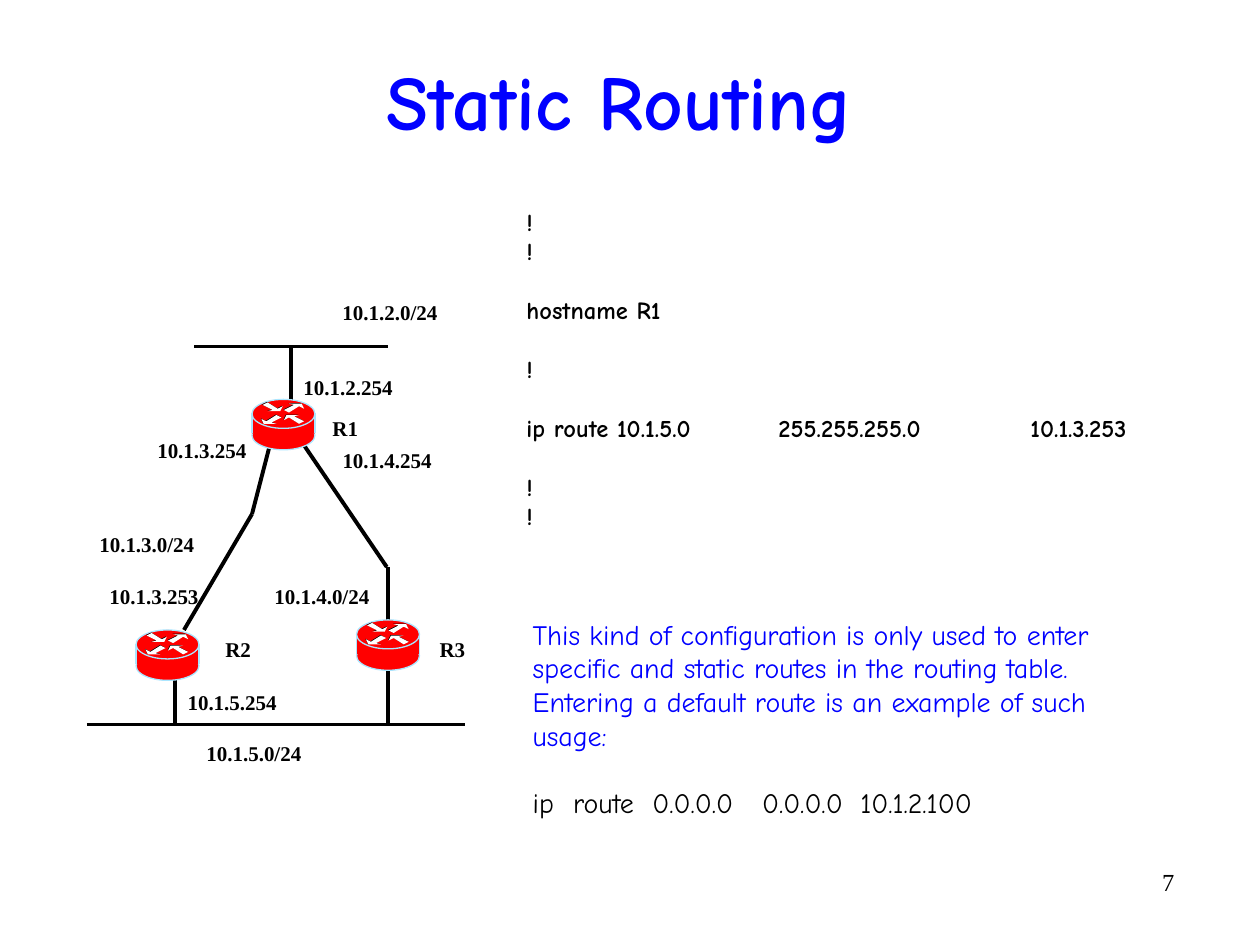
from lxml import etree
from pptx import Presentation
from pptx.dml.color import RGBColor
from pptx.enum.shapes import MSO_CONNECTOR, MSO_SHAPE
from pptx.enum.text import MSO_ANCHOR, MSO_AUTO_SIZE, PP_ALIGN
from pptx.oxml.ns import qn
from pptx.util import Inches, Pt

STRAIGHT = MSO_CONNECTOR.STRAIGHT
OVAL, RECTANGLE = MSO_SHAPE.OVAL, MSO_SHAPE.RECTANGLE
LEFT, CENTER, RIGHT = PP_ALIGN.LEFT, PP_ALIGN.CENTER, PP_ALIGN.RIGHT

BLACK = RGBColor(0x00, 0x00, 0x00)
WHITE = RGBColor(0xFF, 0xFF, 0xFF)
BLUE = RGBColor(0x00, 0x00, 0xFF)
RED = RGBColor(0xFF, 0x00, 0x00)
EDGE = RGBColor(0xAA, 0xE6, 0xFF)

COMIC = "Comic Neue"
TIMES = "Times New Roman"

# Text and whether a gap of one line comes before it
CONFIG = [
    ("!", False),
    ("!", False),
    ("hostname R1", True),
    ("!", True),
    ("ip route 10.1.5.0\t255.255.255.0\t10.1.3.253", True),
    ("!", True),
    ("!", False),
]
NOTE = ("This kind of configuration is only used to enter specific and static "
        "routes in the routing table. Entering a default route is an example "
        "of such usage:")
DEFAULT_ROUTE = "ip\troute\t0.0.0.0\t0.0.0.0\t10.1.2.100"

LINKS = [
    (1.54, 2.75, 3.08, 2.75),
    (2.31, 2.75, 2.31, 3.25),
    (2.15, 3.5, 2, 4.08),
    (2, 4.08, 1.46, 5),
    (2.39, 3.5, 3.07, 4.5),
    (3.08, 4.5, 3.08, 5),
    (1.39, 5.25, 1.39, 5.75),
    (3.08, 5.25, 3.08, 5.75),
    (0.69, 5.75, 3.69, 5.75),
]
NETWORKS = [("10.1.2.0/24", 2.62, 2.33), ("10.1.3.0/24", 0.69, 4.17),
            ("10.1.4.0/24", 2.08, 4.58), ("10.1.5.0/24", 1.54, 5.83)]
INTERFACES = [("10.1.2.254", 2.31, 2.92), ("10.1.3.254", 1.15, 3.42),
              ("10.1.4.254", 2.62, 3.5), ("10.1.3.253", 0.77, 4.58),
              ("10.1.5.254", 1.39, 5.42)]
ROUTER_NAMES = [("R1", 2.54, 3.25), ("R2", 1.69, 5), ("R3", 3.39, 5)]
# Widths leave a little room so that no label breaks
LABEL_GROUPS = [(NETWORKS, 1), (INTERFACES, 0.95), (ROUTER_NAMES, 0.48)]
ROUTERS = [(1.08, 5), (2.83, 4.92), (2, 3.17)]

# Upper right arrow, measured from the router's top left corner
ARROW = [(0.25, 0.08), (0.29, 0.1), (0.37, 0.05), (0.41, 0.07),
         (0.39, 0.03), (0.29, 0.03), (0.33, 0.04)]
# Mirror and shift in x, then in y, giving each of the four arrows
ARROW_PLACES = [(1, 0, 1, 0), (-1, 0.48, -1, 0.22),
                (1, -0.17, -1, 0.12), (-1, 0.66, 1, 0.09)]
ARROW_OFFSET = 0.3 / 72


def place(box, left, top, width, height):
    box.left, box.top = Inches(left), Inches(top)
    box.width, box.height = Inches(width), Inches(height)


def format_para(para, font, size, color, bold=False, align=LEFT, before=0):
    para.alignment = align
    para.space_before = Pt(before)
    for span in para.runs:
        span.font.name = font
        span.font.size = Pt(size)
        span.font.bold = bold
        span.font.color.rgb = color


def set_tabs(para, stops):
    tabs = etree.SubElement(para._p.get_or_add_pPr(), qn("a:tabLst"))
    for stop in stops:
        etree.SubElement(tabs, qn("a:tab"), pos=str(Inches(stop)), algn="l")


def add_text(page, text, left, top, width, height, wrap=True):
    box = page.shapes.add_textbox(Inches(left), Inches(top), Inches(width), Inches(height))
    box.text_frame.word_wrap = wrap
    box.text_frame.text = text
    return box.text_frame


def add_line(shapes, x1, y1, x2, y2, color, weight):
    line = shapes.add_connector(STRAIGHT, Inches(x1), Inches(y1), Inches(x2), Inches(y2))
    line.line.color.rgb = color
    line.line.width = Pt(weight)
    etree.SubElement(line._element.spPr, qn("a:effectLst"))


def paint(shape, fill, edge=None):
    shape.shadow.inherit = False
    shape.fill.solid()
    shape.fill.fore_color.rgb = fill
    if edge is None:
        shape.line.fill.background()
    else:
        shape.line.color.rgb = edge
        shape.line.width = Pt(0.75)


def add_arrow(shapes, left, top, arrow_place, color):
    flip_x, shift_x, flip_y, shift_y = arrow_place
    points = [(Inches(left + flip_x * x + shift_x), Inches(top + flip_y * y + shift_y))
              for x, y in ARROW]
    outline = shapes.build_freeform(*points[0])
    outline.add_line_segments(points[1:], close=True)
    paint(outline.convert_to_shape(), color)


def add_router(page, left, top):
    shapes = page.shapes.add_group_shape().shapes
    for kind, drop, height, edge in [(OVAL, 0.17, 0.23, EDGE),
                                     (RECTANGLE, 0.12, 0.15, None),
                                     (OVAL, 0, 0.23, EDGE)]:
        part = shapes.add_shape(kind, Inches(left), Inches(top + drop),
                                Inches(0.5), Inches(height))
        paint(part, RED, edge)
    for color, offset in [(BLACK, 0), (WHITE, ARROW_OFFSET)]:
        for arrow_place in ARROW_PLACES:
            add_arrow(shapes, left + offset, top + offset, arrow_place, color)
    for side in (left, left + 0.5):
        add_line(shapes, side, top + 0.11, side, top + 0.27, EDGE, 0.75)


def fill_title(title):
    place(title, 0.33, 0.42, 9.17, 0.75)
    title.text_frame.text = "Static Routing"
    title.text_frame.vertical_anchor = MSO_ANCHOR.MIDDLE
    title.text_frame.auto_size = MSO_AUTO_SIZE.NONE
    format_para(title.text_frame.paragraphs[0], COMIC, 44, BLUE, True, CENTER)


def add_config(page):
    text = "\n".join(line for line, _ in CONFIG)
    frame = add_text(page, text, 4.08, 1.59, 5.77, 3.33)
    for para, (_, gap) in zip(frame.paragraphs, CONFIG):
        format_para(para, COMIC, 14, BLACK, True, before=16.9 if gap else 0)
        set_tabs(para, [2, 4])


def add_note(page):
    frame = add_text(page, NOTE, 4.13, 4.85, 5.17, 1.72)
    format_para(frame.paragraphs[0], COMIC, 16, BLUE)
    route = frame.add_paragraph()
    route.text = DEFAULT_ROUTE
    format_para(route, COMIC, 16, BLACK, before=19.2)
    set_tabs(route, [0.32, 0.95, 1.82, 2.6])


def add_network(page):
    for link in LINKS:
        add_line(page.shapes, *link, BLACK, 2.25)
    for labels, width in LABEL_GROUPS:
        for text, left, top in labels:
            frame = add_text(page, text, left, top, width, 0.3)
            format_para(frame.paragraphs[0], TIMES, 12, BLACK, True)
    for left, top in ROUTERS:
        add_router(page, left, top)


def main():
    deck = Presentation()
    deck.slide_width, deck.slide_height = Inches(10), Inches(7.5)
    page = deck.slides.add_slide(deck.slide_layouts[5])
    fill_title(page.shapes.title)
    add_config(page)
    add_note(page)
    add_network(page)
    number = add_text(page, "7", 8.42, 6.83, 1, 0.42)
    format_para(number.paragraphs[0], TIMES, 14, BLACK, align=RIGHT)
    deck.save("out.pptx")


if __name__ == "__main__":
    main()
